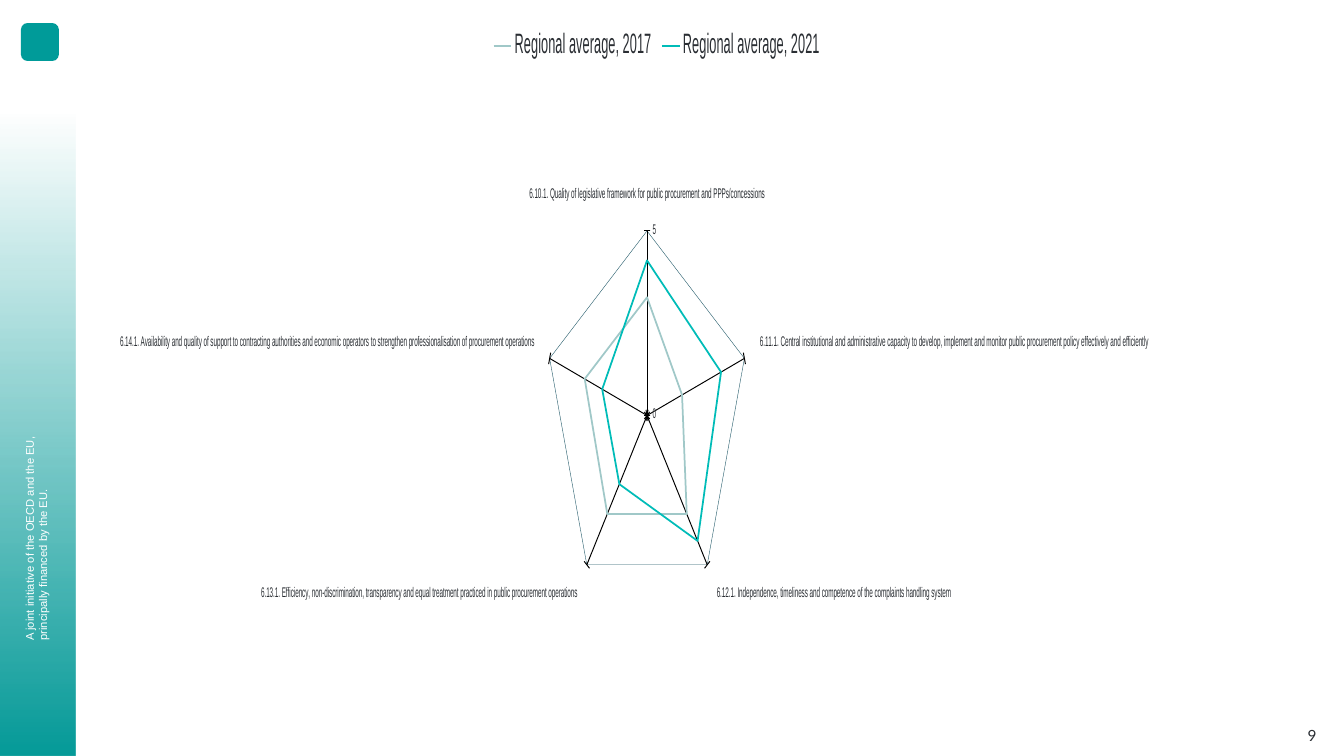
import pptx
import pptx.chart.data
import pptx.dml.color
import pptx.enum.chart
import pptx.enum.shapes
import pptx.enum.text
import pptx.oxml
import pptx.oxml.ns
import pptx.util

Pt = pptx.util.Pt
COLOURS = {
    "band": "069B99", "emblem": "009B99", "white": "FFFFFF", "text": "2A2E33",
    "ring": "215968", "spoke": "000000", "category line": "DDDFE3",
    "2017": "A0C8C8", "2021": "00BCB8",
}
INDICATORS = [
    "6.10.1. Quality of legislative framework for public procurement and PPPs/concessions",
    "6.11.1. Central institutional and administrative capacity to develop, implement and "
    "monitor public procurement policy effectively and efficiently",
    "6.12.1. Independence, timeliness and competence of the complaints handling system",
    "6.13.1. Efficiency, non-discrimination, transparency and equal treatment practiced in "
    "public procurement operations",
    "6.14.1. Availability and quality of support to contracting authorities and economic "
    "operators to strengthen professionalisation of procurement operations",
]
AVERAGES = {
    "2017": (3.2, 1.8, 3.3, 3.3, 3.2),
    "2021": (4.2, 3.8, 4.2, 2.3, 2.3),
}
PLOT_AREA = {"x": 0.305, "y": 0.267, "w": 0.356, "h": 0.665}


def colour(name):
    return pptx.dml.color.RGBColor.from_string(COLOURS[name])


def style_font(font, face, size, colour_name):
    font.name = face
    font.size = Pt(size)
    font.color.rgb = colour(colour_name)


def style_line(line, colour_name, width):
    line.color.rgb = colour(colour_name)
    line.width = Pt(width)


def add_plain_shape(slide, preset, left, top, width, height):
    shape = slide.shapes.add_shape(preset, Pt(left), Pt(top), Pt(width), Pt(height))
    shape.shadow.inherit = False
    shape.line.fill.background()
    return shape


def add_fading_band(slide):
    band = add_plain_shape(slide, pptx.enum.shapes.MSO_SHAPE.RECTANGLE, 0, 0, 54, 540)
    band.fill.gradient()
    band.fill.gradient_angle = 270
    for stop, position in zip(band.fill.gradient_stops, (0.15, 1)):
        stop.position = position
        stop.color.rgb = colour("band")
    first_colour = band._element.spPr.find(".//" + pptx.oxml.ns.qn("a:srgbClr"))
    first_colour.append(pptx.oxml.parse_xml(
        f'<a:alpha {pptx.oxml.ns.nsdecls("a")} val="0"/>'))


def add_emblem(slide):
    emblem = add_plain_shape(
        slide, pptx.enum.shapes.MSO_SHAPE.ROUNDED_RECTANGLE, 15, 16.5, 27, 27)
    emblem.fill.solid()
    emblem.fill.fore_color.rgb = colour("emblem")


def add_text(slide, wording, bounds, face, size, colour_name):
    box = slide.shapes.add_textbox(*(Pt(length) for length in bounds))
    box.text_frame.word_wrap = True
    run = box.text_frame.paragraphs[0].add_run()
    run.text = wording
    style_font(run.font, face, size, colour_name)
    return box


def place_plot(chart):
    """Fix the inner plot area and give it a white fill."""
    namespaces = pptx.oxml.ns.nsdecls("c", "a")
    plot_area = chart._chartSpace.chart.plotArea
    for layout in plot_area.findall(pptx.oxml.ns.qn("c:layout")):
        plot_area.remove(layout)
    modes = "".join(f'<c:{side}Mode val="edge"/>' for side in "xy")
    extents = "".join(f'<c:{key} val="{share}"/>' for key, share in PLOT_AREA.items())
    plot_area.insert(0, pptx.oxml.parse_xml(
        f'<c:layout {namespaces}><c:manualLayout><c:layoutTarget val="inner"/>'
        f'{modes}{extents}</c:manualLayout></c:layout>'))
    plot_area.append(pptx.oxml.parse_xml(
        f'<c:spPr {namespaces}><a:solidFill><a:srgbClr val="{COLOURS["white"]}"/>'
        '</a:solidFill></c:spPr>'))


def style_axes(chart):
    ticks = pptx.enum.chart.XL_TICK_MARK
    indicators, scores = chart.category_axis, chart.value_axis
    for axis, mark in ((indicators, ticks.NONE), (scores, ticks.INSIDE)):
        axis.major_tick_mark = mark
        axis.minor_tick_mark = ticks.NONE
        style_font(axis.tick_labels.font, "Arial Narrow", 10, "text")
    indicators.has_major_gridlines = False
    style_line(indicators.format.line, "category line", 0.75)
    scores.minimum_scale, scores.maximum_scale, scores.major_unit = 0, 5, 5
    scores.tick_labels.number_format = "0"
    scores.tick_labels.number_format_is_linked = False
    scores.has_major_gridlines = True
    style_line(scores.format.line, "spoke", 1.25)
    style_line(scores.major_gridlines.format.line, "ring", 0.5)


def add_radar(slide):
    averages = pptx.chart.data.CategoryChartData()
    averages.categories = INDICATORS
    for year, scores in AVERAGES.items():
        averages.add_series(f"Regional average, {year}", scores)
    chart = slide.shapes.add_chart(
        pptx.enum.chart.XL_CHART_TYPE.RADAR,
        Pt(85.7), Pt(13.7), Pt(740.9), Pt(472.3), averages).chart
    chart.has_title = False
    style_font(chart.font, "Arial Narrow", 10, "text")
    chart.has_legend = True
    chart.legend.position = pptx.enum.chart.XL_LEGEND_POSITION.TOP
    chart.legend.include_in_layout = True
    style_font(chart.legend.font, "Arial Narrow", 20, "text")
    for year, series in zip(AVERAGES, chart.plots[0].series):
        style_line(series.format.line, year, 2.25)
        series.marker.style = pptx.enum.chart.XL_MARKER_STYLE.NONE
        series.smooth = False
    style_axes(chart)
    place_plot(chart)


def main():
    deck = pptx.Presentation()
    deck.slide_width, deck.slide_height = Pt(960), Pt(540)
    slide = deck.slides.add_slide(deck.slide_layouts[6])
    add_fading_band(slide)
    add_emblem(slide)
    financing = add_text(
        slide, "A joint initiative of the OECD and the EU, principally financed by the EU.",
        (-68.4, 357.1, 188.6, 26.6), "Arial", 8, "white")
    financing.rotation = 270
    financing.text_frame.auto_size = pptx.enum.text.MSO_AUTO_SIZE.SHAPE_TO_FIT_TEXT
    page = add_text(slide, "9", (742.3, 511.2, 205.2, 28.8), "Lato", 11, "text")
    page.text_frame.vertical_anchor = pptx.enum.text.MSO_ANCHOR.MIDDLE
    page.text_frame.paragraphs[0].alignment = pptx.enum.text.PP_ALIGN.RIGHT
    add_radar(slide)
    deck.save("out.pptx")


if __name__ == "__main__":
    main()
